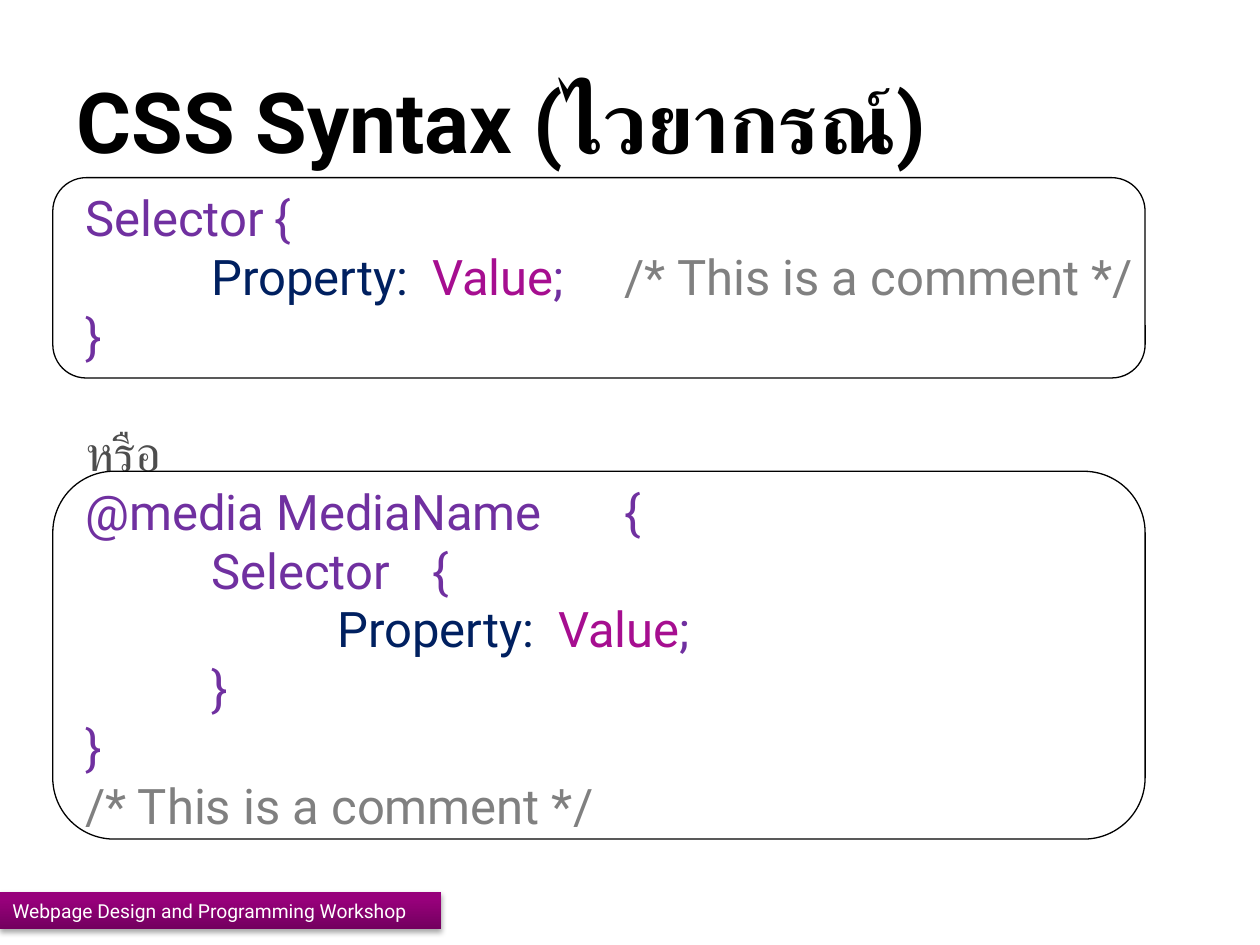
import copy

import pptx
import pptx.dml.color
import pptx.enum.shapes
import pptx.enum.text
import pptx.oxml
import pptx.oxml.ns
import pptx.util
from lxml import etree

Pt = pptx.util.Pt
qn = pptx.oxml.ns.qn
ANCHOR = pptx.enum.text.MSO_ANCHOR
SHAPE = pptx.enum.shapes.MSO_SHAPE

COLORS = {
    "black": "000000", "white": "FFFFFF", "grey": "4D4D4D",
    "selector": "7030A0", "property": "002060", "value": "A60E90",
    "comment": "808080", "bar_dark": "74005F", "bar_mid": "97007B",
    "bar_light": "98007C",
}
LINE = 33.6  # height of a code line
TAB = 72     # one indent step


def rgb(name):
    return pptx.dml.color.RGBColor.from_string(COLORS[name])


class SlideBuilder:
    font = "Roboto"

    def __init__(self, page):
        self.page = page

    def style(self, span, size, color, bold=False):
        span.font.name = self.font
        span.font.size = Pt(size)
        span.font.bold = bold
        span.font.color.rgb = rgb(color)

    def title(self, text, left, top, width, height):
        box = self.page.shapes.title
        box.left, box.top, box.width, box.height = map(Pt, (left, top, width, height))
        frame = box.text_frame
        frame.text = text
        frame.vertical_anchor = ANCHOR.MIDDLE
        frame.auto_size = pptx.enum.text.MSO_AUTO_SIZE.NONE
        para = frame.paragraphs[0]
        para.alignment = pptx.enum.text.PP_ALIGN.LEFT
        self.style(para.runs[0], 48, "black", bold=True)

    def code(self, lines, left, top, width, height):
        """Each line is (spans, tab stops, space before); a span is (text, color)."""
        box = self.page.shapes.add_textbox(*map(Pt, (left, top, width, height)))
        box.fill.solid()
        box.fill.fore_color.rgb = rgb("white")
        frame = box.text_frame
        frame.word_wrap = True
        frame.margin_top = Pt(5)
        for index, (spans, stops, before) in enumerate(lines):
            para = frame.add_paragraph() if index else frame.paragraphs[0]
            if stops:
                tabs = etree.SubElement(para._p.get_or_add_pPr(), qn("a:tabLst"))
                for stop in stops:
                    etree.SubElement(tabs, qn("a:tab"), pos=str(Pt(stop)), algn="l")
            para.line_spacing = Pt(LINE)
            para.space_before = Pt(before)
            for text, color in spans:
                span = para.add_run()
                span.text = text
                self.style(span, 28, color)

    def frame(self, left, top, width, height):
        box = self.page.shapes.add_shape(
            SHAPE.ROUNDED_RECTANGLE, *map(Pt, (left, top, width, height)))
        box.shadow.inherit = False
        box.fill.background()
        box.line.color.rgb = rgb("black")
        box.line.width = Pt(0.75)

    def footer(self, text, left, top, width, height):
        bar = self.page.shapes.add_shape(
            SHAPE.RECTANGLE, *map(Pt, (left, top, width, height)))
        bar.line.fill.background()

        # Gradient from the bottom edge upwards, with a third stop at 80 %
        bar.fill.gradient()
        bar.fill.gradient_angle = 90
        first, last = bar.fill.gradient_stops
        first.color.rgb = rgb("bar_dark")
        last.color.rgb = rgb("bar_light")
        properties = bar._element.spPr
        stops = properties.find(".//" + qn("a:gsLst"))
        middle = copy.deepcopy(stops[0])
        middle.set("pos", "80000")
        middle[0].set("val", COLORS["bar_mid"])
        stops.insert(1, middle)

        # Soft shadow below the bar
        bar.shadow.inherit = False
        shadow = etree.SubElement(
            properties.find(qn("a:effectLst")), qn("a:outerShdw"),
            blurRad=str(Pt(3.1)), dist=str(Pt(1.8)), dir="5400000", rotWithShape="0")
        color = etree.SubElement(shadow, qn("a:srgbClr"), val=COLORS["black"])
        etree.SubElement(color, qn("a:alpha"), val="35000")

        frame = bar.text_frame
        frame.text = text
        frame.vertical_anchor = ANCHOR.MIDDLE
        para = frame.paragraphs[0]
        para.alignment = pptx.enum.text.PP_ALIGN.LEFT
        self.style(para.runs[0], 11, "white")


def plain(text, color="selector", before=0):
    return [(text, color)], [], before


def declaration(depth, comment=None):
    """A property line indented by depth, with an optional trailing comment."""
    spans = [("\t" * depth + "Property:\t", "property"),
             ("Value", "value"), (";", "selector")]
    stops = [TAB * step for step in range(1, depth + 1)]
    stops.append(TAB * (depth + 1.75))
    if comment:
        spans.append(("\t" + comment, "comment"))
        stops.append(TAB * (depth + 3.28))
    return spans, stops, 0


def main():
    deck = pptx.Presentation()
    deck.slide_width, deck.slide_height = Pt(720), Pt(540)
    builder = SlideBuilder(deck.slides.add_slide(deck.slide_layouts[5]))
    comment = "/* This is a comment */"

    # Title
    builder.title("CSS Syntax (ไวยากรณ์)", 36.7, 43.2, 648, 51.1)

    # Both syntax forms
    builder.code([
        plain("Selector\t{"),
        declaration(1, comment),
        plain("}"),
        plain("หรือ", "grey", before=LINE),
        plain("@media MediaName\t{"),
        plain("\tSelector\t{"),
        declaration(2),
        plain("\t}"),
        plain("}"),
        plain(comment, "comment"),
    ], 41.8, 102.2, 624.2, 383.8)

    # Frames around the two forms
    for top, height in ((101.5, 114.5), (269.3, 210.2)):
        builder.frame(30.2, top, 624.2, height)

    # Footer bar
    builder.footer("Webpage Design and Programming Workshop", 0, 509.8, 252, 20.9)

    deck.save("out.pptx")


if __name__ == "__main__":
    main()
